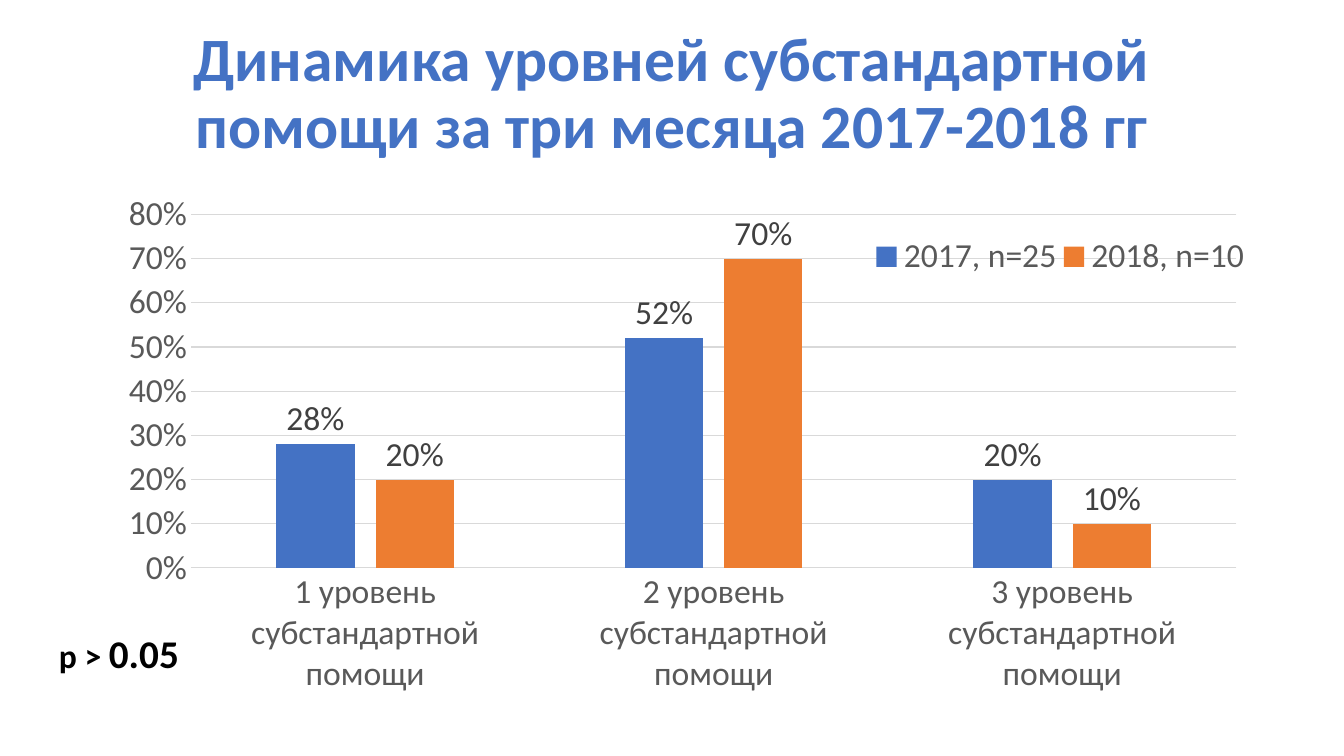
from lxml import etree
from pptx import Presentation
from pptx.chart.data import CategoryChartData as ChartData
from pptx.dml.color import RGBColor as RGB
from pptx.enum.chart import XL_CHART_TYPE as Kind, XL_LABEL_POSITION as Spot
from pptx.enum.chart import XL_LEGEND_POSITION as Side, XL_TICK_MARK as Tick
from pptx.enum.text import MSO_ANCHOR as Anchor, PP_ALIGN as Align
from pptx.oxml import parse_xml
from pptx.util import Pt

FONT = "Calibri"
BLUE, GREY, PALE = "4472C4", "595959", "D9D9D9"
TITLE = "Динамика уровней субстандартной помощи за три месяца 2017-2018 гг"
NOTE = [("p > ", 24), ("0.05", 28)]
CATS = [f"{n} уровень субстандартной помощи" for n in (1, 2, 3)]
SERIES = [
    ("2017, n=25", (0.28, 0.52, 0.2), BLUE),
    ("2018, n=10", (0.2, 0.7, 0.1), "ED7D31"),
]
LEFT, WIDTH = 66, 828
PLOT = (0.085, 0.052, 0.902, 0.651)
LEGEND = (0.67, 0.07, 0.33, 0.12)
NS = "http://schemas.openxmlformats.org/drawingml/2006/chart"


def color(code):
    return RGB.from_string(code)


def style(font, size, code, bold=False):
    font.name, font.size, font.bold = FONT, Pt(size), bold
    font.color.rgb = color(code)


def stroke(line, code):
    line.color.rgb = color(code)
    line.width = Pt(0.75)


def add_text(slide, runs, box, code="000000", align=Align.LEFT,
             anchor=Anchor.TOP, wrap=False, gap=1.0):
    frame = slide.shapes.add_textbox(*map(Pt, box)).text_frame
    frame.word_wrap, frame.vertical_anchor = wrap, anchor
    para = frame.paragraphs[0]
    para.alignment, para.line_spacing = align, gap
    for text, size in runs:
        run = para.add_run()
        run.text = text
        style(run.font, size, code, bold=True)


def layout(box, inner=False):
    """Manual chart layout, in fractions of the chart area."""
    tags = [("layoutTarget", "inner")] if inner else []
    tags += [("xMode", "edge"), ("yMode", "edge")]
    tags += zip("xywh", box)
    body = "".join(f'<c:{tag} val="{val}"/>' for tag, val in tags)
    return parse_xml(f'<c:layout xmlns:c="{NS}"><c:manualLayout>{body}'
                     '</c:manualLayout></c:layout>')


def add_bars(slide, box):
    data = ChartData(number_format="0%")
    data.categories = CATS
    for name, vals, _ in SERIES:
        data.add_series(name, vals)
    chart = slide.shapes.add_chart(
        Kind.COLUMN_CLUSTERED, *map(Pt, box), data).chart
    style(chart.font, 24, "000000")
    chart.has_title = False

    plot = chart.plots[0]
    plot.gap_width, plot.overlap = 219, -27
    plot.vary_by_categories = False
    for bars, (_, _, code) in zip(plot.series, SERIES):
        bars.format.fill.solid()
        bars.format.fill.fore_color.rgb = color(code)
        labels = bars.data_labels
        labels.show_value = True
        labels.number_format, labels.number_format_is_linked = "0%", False
        labels.position = Spot.OUTSIDE_END
        style(labels.font, 24, "404040")

    cat, val = chart.category_axis, chart.value_axis
    for axis in (cat, val):
        axis.major_tick_mark = axis.minor_tick_mark = Tick.NONE
        style(axis.tick_labels.font, 24, GREY)
    stroke(cat.format.line, PALE)
    val.format.line.fill.background()
    stroke(val.major_gridlines.format.line, PALE)
    val.minimum_scale, val.maximum_scale, val.major_unit = 0, 0.8, 0.1
    val.tick_labels.number_format = "0%"
    val.tick_labels.number_format_is_linked = False

    chart.has_legend = True
    legend = chart.legend
    legend.position, legend.include_in_layout = Side.BOTTOM, False
    style(legend.font, 24, GREY)
    root = chart.element
    for tag in ("plotArea", "legend"):
        for old in root.findall(f".//{{{NS}}}{tag}/{{{NS}}}layout"):
            old.getparent().remove(old)
    root.find(f".//{{{NS}}}plotArea").insert(0, layout(PLOT, inner=True))
    root.find(f".//{{{NS}}}legendPos").addnext(layout(LEGEND))


deck = Presentation()
deck.slide_width, deck.slide_height = Pt(960), Pt(540)
page = deck.slides.add_slide(deck.slide_layouts[6])
add_text(page, [(TITLE, 44)], (LEFT, 16, WIDTH, 104), code=BLUE,
         align=Align.CENTER, anchor=Anchor.MIDDLE, wrap=True, gap=0.9)
add_bars(page, (LEFT, 133, WIDTH, 388))
add_text(page, NOTE, (35, 446, 101, 41))
deck.save("out.pptx")
